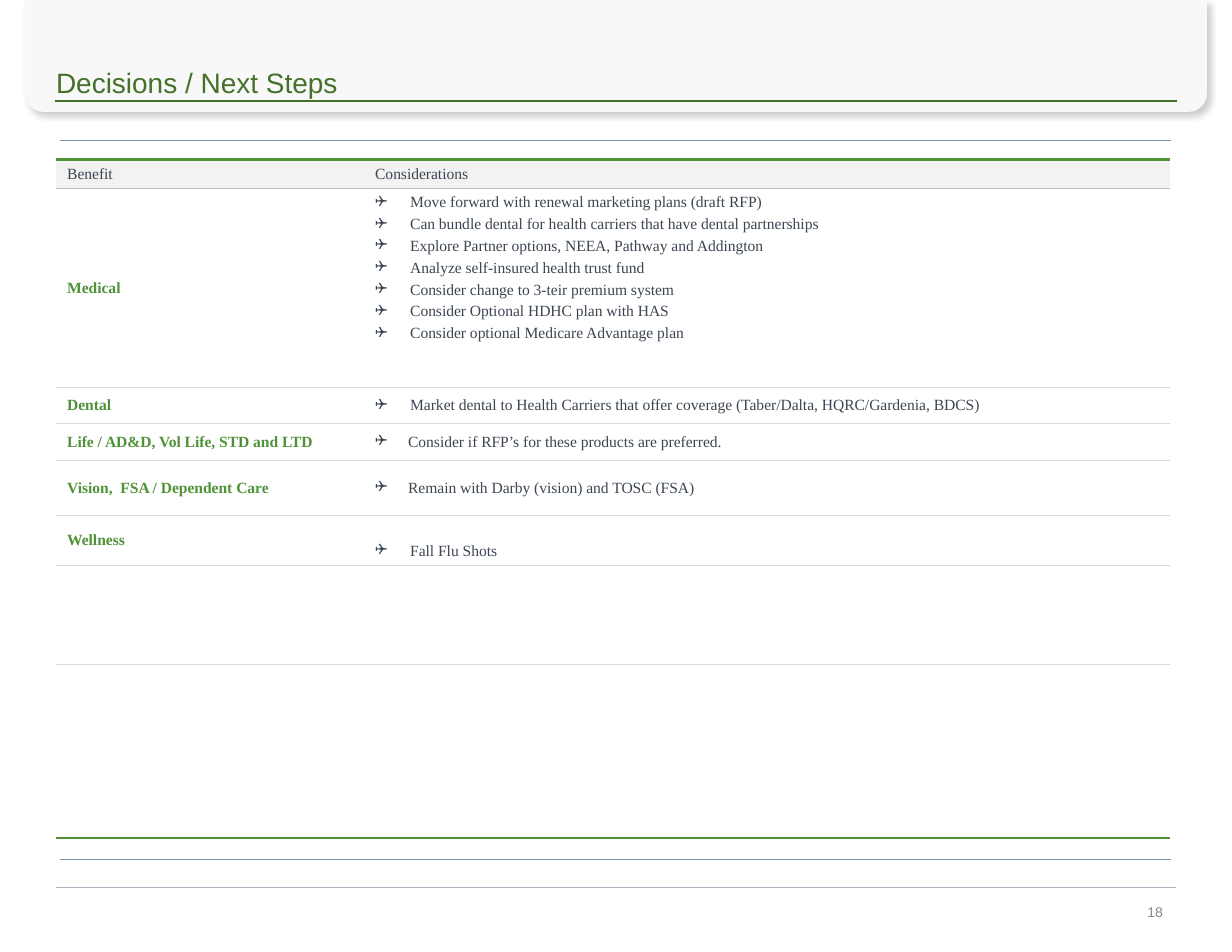
"""Builds the Decisions / Next Steps slide with its benefit considerations table."""
from lxml.etree import SubElement
from pptx import Presentation
from pptx.dml.color import RGBColor
from pptx.enum.dml import MSO_LINE
from pptx.enum.shapes import MSO_CONNECTOR, MSO_SHAPE
from pptx.enum.text import MSO_ANCHOR, PP_ALIGN
from pptx.oxml import parse_xml
from pptx.oxml.ns import nsdecls, qn
from pptx.util import Pt

PX = 914400 // 112
COLORS = {
    "panel": "F8F8F8", "title": "46712B", "green": "4F9237", "text": "3C4652",
    "header": "F2F2F2", "header_rule": "BFBFBF", "row_rule": "D9D9D9",
    "dots": "7F8FA2", "footer": "AAB4C1", "number": "898989",
}


def write(p, text, size=10, font="Times New Roman", color="text", bold=False,
          align=PP_ALIGN.LEFT, before=0, indent=0):
    pPr = p._p.get_or_add_pPr()
    p.alignment = align
    p.space_before = Pt(before)
    if indent:
        pPr.set("marL", str(indent * PX))
        pPr.set("indent", str(-indent * PX))
        SubElement(pPr, qn("a:buFont")).set("typeface", "Wingdings")
        SubElement(pPr, qn("a:buChar")).set("char", "❑")
    r = p.add_run()
    r.text = text
    r.font.size = Pt(size)
    r.font.name = font
    r.font.bold = bold
    r.font.color.rgb = RGBColor.from_string(COLORS[color])


def set_border(cell, side, color=None, width=0):
    ln = SubElement(cell._tc.get_or_add_tcPr(), qn(f"a:ln{side}"), w=str(Pt(width)))
    if color:
        fill = SubElement(ln, qn("a:solidFill"))
        SubElement(fill, qn("a:srgbClr"), val=COLORS[color])
    else:
        SubElement(ln, qn("a:noFill"))


prs = Presentation()
prs.slide_width, prs.slide_height = 1232 * PX, 952 * PX
s = prs.slides.add_slide(prs.slide_layouts[5])

panel = s.shapes.add_shape(MSO_SHAPE.ROUND_2_SAME_RECTANGLE, 25 * PX, 0, 1182 * PX, 112 * PX)
panel.fill.solid()
panel.fill.fore_color.rgb = RGBColor.from_string(COLORS["panel"])
panel.line.fill.background()
panel._element.spPr.find(qn("a:xfrm")).set("flipV", "1")
panel._element.spPr.append(parse_xml(
    f'<a:effectLst {nsdecls("a")}><a:outerShdw blurRad="50800" dist="38100" dir="2700000" '
    'algn="tl" rotWithShape="0"><a:srgbClr val="000000"><a:alpha val="20000"/></a:srgbClr>'
    '</a:outerShdw></a:effectLst>'))

title = s.shapes.title
title._element.getparent().append(title._element)
title.left, title.top, title.width, title.height = 56 * PX, 37 * PX, 1120 * PX, 62 * PX
tf = title.text_frame
tf.margin_left = tf.margin_top = tf.margin_bottom = 0
tf.vertical_anchor = MSO_ANCHOR.BOTTOM
write(tf.paragraphs[0], "Decisions / Next Steps", size=20 - 2, font="Arial", color="title")

RULES = [
    (56, 1176, 887, "footer", 0.25, None),
    (55, 1177, 101, "title", 1.25, None),
    (60, 1170, 859, "dots", 0.25, MSO_LINE.ROUND_DOT),
    (60, 1170, 140, "dots", 0.25, MSO_LINE.ROUND_DOT),
]
for left, right, y, color, width, dash in RULES:
    rule = s.shapes.add_connector(MSO_CONNECTOR.STRAIGHT, left * PX, y * PX, right * PX, y * PX)
    rule.line.color.rgb = RGBColor.from_string(COLORS[color])
    rule.line.width = Pt(width)
    if dash:
        rule.line.dash_style = dash
    SubElement(rule._element.spPr, qn("a:effectLst"))

MIDDLE = MSO_ANCHOR.MIDDLE
ROWS = [
    (28, "Benefit", ["Considerations"], 0, MSO_ANCHOR.TOP),
    (199, "Medical", [
        "Move forward with renewal marketing plans (draft RFP)",
        "Can bundle dental for health carriers that have dental partnerships",
        "Explore Partner options, NEEA, Pathway and Addington",
        "Analyze self-insured health trust fund",
        "Consider change to 3-teir premium system",
        "Consider Optional HDHC plan with HAS",
        "Consider optional Medicare Advantage plan",
    ], 35, MSO_ANCHOR.TOP),
    (36, "Dental", [
        "Market dental to Health Carriers that offer coverage (Taber/Dalta, HQRC/Gardenia, BDCS)",
    ], 35, MIDDLE),
    (37, "Life / AD&D, Vol Life, STD and LTD",
     ["Consider if RFP’s for these products are preferred."], 33, MIDDLE),
    (55, "Vision,  FSA / Dependent Care",
     ["Remain with Darby (vision) and TOSC (FSA)"], 33, MIDDLE),
    (50, "Wellness", ["Fall Flu Shots"], 35, MSO_ANCHOR.BOTTOM),
    (99, "", [], 0, MIDDLE),
    (174, "", [], 0, MIDDLE),
]
last = len(ROWS) - 1
height = sum(row[0] for row in ROWS)
table = s.shapes.add_table(len(ROWS), 2, 56 * PX, 160 * PX, 1114 * PX, height * PX).table
table.first_row = table.horz_banding = False
table.columns[0].width, table.columns[1].width = 308 * PX, 806 * PX

for i, (row_height, benefit, items, indent, anchor) in enumerate(ROWS):
    table.rows[i].height = row_height * PX
    top = {0: ("green", 2.25), 1: ("header_rule", 1)}.get(i, ("row_rule", 0.5))
    bottom = {0: ("header_rule", 1), last: ("green", 1.5)}.get(i, ("row_rule", 0.5))
    for cell in table.rows[i].cells:
        set_border(cell, "L")
        set_border(cell, "R")
        set_border(cell, "T", *top)
        set_border(cell, "B", *bottom)
        if i == 0:
            cell.fill.solid()
            cell.fill.fore_color.rgb = RGBColor.from_string(COLORS["header"])
        else:
            cell.fill.background()
    name, notes = table.rows[i].cells
    name.vertical_anchor = MSO_ANCHOR.TOP if i == 0 else MIDDLE
    notes.vertical_anchor = anchor
    if benefit:
        write(name.text_frame.paragraphs[0], benefit, color="green" if i else "text", bold=i > 0)
    for j, item in enumerate(items):
        tf = notes.text_frame
        p = tf.add_paragraph() if j else tf.paragraphs[0]
        write(p, item, before=3 if j else 0, indent=indent)

number = s.shapes.add_textbox(1120 * PX, 896 * PX, 54 * PX, 32 * PX)
number.text_frame.word_wrap = True
number.text_frame.vertical_anchor = MIDDLE
write(number.text_frame.paragraphs[0], "18", size=9, font="Arial", color="number",
      align=PP_ALIGN.RIGHT)

prs.save("out.pptx")
